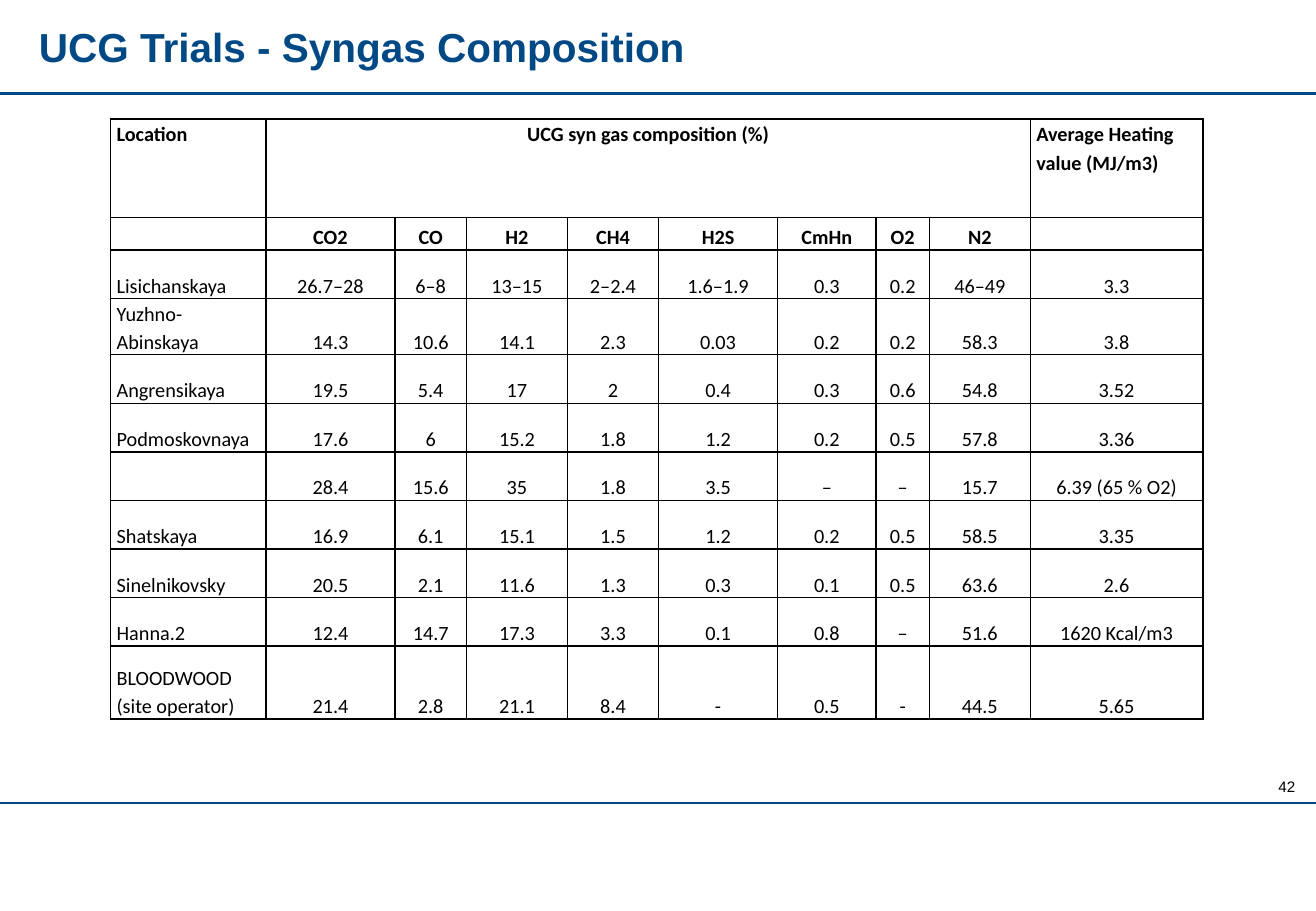
from lxml import etree
from pptx import Presentation, util as u
from pptx.dml.color import RGBColor
from pptx.enum import shapes, text
from pptx.oxml.ns import qn

W, H = 10.83, 7.5
NAVY, BLACK = "014985", "000000"
LEFT, CENTER, RIGHT = text.PP_ALIGN.LEFT, text.PP_ALIGN.CENTER, text.PP_ALIGN.RIGHT
TOP, MIDDLE, BOTTOM = text.MSO_ANCHOR.TOP, text.MSO_ANCHOR.MIDDLE, text.MSO_ANCHOR.BOTTOM


def write(tf, words, size=12, font="Calibri", color=BLACK, bold=False,
          align=CENTER, spacing=1.15):
    p = tf.paragraphs[0]
    p.alignment, p.line_spacing = align, spacing
    if not words:
        p._p.get_or_add_endParaRPr().set("sz", str(size * 100))
        return
    r = p.add_run()
    r.text = words
    r.font.size, r.font.name, r.font.bold = u.Pt(size), font, bold
    r.font.color.rgb = RGBColor.from_string(color)


def add_borders(cell):
    """Draw a thin black line on all four sides of a table cell."""
    tcPr = cell._tc.get_or_add_tcPr()
    for side in ("lnL", "lnR", "lnT", "lnB"):
        ln = etree.SubElement(tcPr, qn("a:" + side), w=str(u.Pt(1)))
        fill = etree.SubElement(ln, qn("a:solidFill"))
        etree.SubElement(fill, qn("a:srgbClr"), val=BLACK)


prs = Presentation()
prs.slide_width, prs.slide_height = u.Inches(W), u.Inches(H)
s = prs.slides.add_slide(prs.slide_layouts[6])

# Rules across the page
for y in (6.61, 0.77):
    rule = s.shapes.add_connector(shapes.MSO_CONNECTOR.STRAIGHT,
                                  0, u.Inches(y), u.Inches(W), u.Inches(y))
    rule.line.color.rgb = RGBColor.from_string(NAVY)
    rule.line.width = u.Pt(1.5)
    etree.SubElement(rule._element.spPr, qn("a:effectLst"))

# Title and page number
for box, wrap, words, look in (
    ((0.21, 0.14, 10.3, 0.51), True, "UCG Trials - Syngas Composition",
     dict(size=24, color=NAVY, bold=True, align=LEFT, spacing=0.98)),
    ((10.41, 6.35, 0.36, 0.25), False, "42", dict(size=9, align=RIGHT, spacing=1.0)),
):
    tf = s.shapes.add_textbox(*map(u.Inches, box)).text_frame
    tf.word_wrap, tf.vertical_anchor = wrap, MIDDLE
    tf.margin_left = tf.margin_right = u.Inches(0.11)
    write(tf, words, font="Arial", **look)

# Gas composition table
rows = [
    ["Location", "UCG syn gas composition (%)"] + [""] * 7 + ["Average Heating value (MJ/m3)"],
    ["", "CO2", "CO", "H2", "CH4", "H2S", "CmHn", "O2", "N2", ""],
    ["Lisichanskaya", "26.7–28", "6–8", "13–15", "2–2.4", "1.6–1.9", "0.3", "0.2", "46–49", "3.3"],
    ["Yuzhno-Abinskaya", "14.3", "10.6", "14.1", "2.3", "0.03", "0.2", "0.2", "58.3", "3.8"],
    ["Angrensikaya", "19.5", "5.4", "17", "2", "0.4", "0.3", "0.6", "54.8", "3.52"],
    ["Podmoskovnaya", "17.6", "6", "15.2", "1.8", "1.2", "0.2", "0.5", "57.8", "3.36"],
    ["", "28.4", "15.6", "35", "1.8", "3.5", "–", "–", "15.7", "6.39 (65 % O2)"],
    ["Shatskaya", "16.9", "6.1", "15.1", "1.5", "1.2", "0.2", "0.5", "58.5", "3.35"],
    ["Sinelnikovsky", "20.5", "2.1", "11.6", "1.3", "0.3", "0.1", "0.5", "63.6", "2.6"],
    ["Hanna.2", "12.4", "14.7", "17.3", "3.3", "0.1", "0.8", "–", "51.6", "1620 Kcal/m3"],
    ["BLOODWOOD (site operator)", "21.4", "2.8", "21.1", "8.4", "-", "0.5", "-", "44.5", "5.65"],
]
widths = [1.28, 1.06, 0.59, 0.83, 0.75, 0.98, 0.81, 0.44, 0.83, 1.42]
heights = [0.81, 0.27] + [0.4] * 8 + [0.6]

table = s.shapes.add_table(len(rows), len(widths), u.Inches(0.91), u.Inches(0.98),
                           u.Inches(sum(widths)), u.Inches(sum(heights))).table
table.first_row = table.horz_banding = False
for column, width in zip(table.columns, widths):
    column.width = u.Inches(width)
for row, height in zip(table.rows, heights):
    row.height = u.Inches(height)
table.cell(0, 1).merge(table.cell(0, 8))

for i, row in enumerate(rows):
    for j, words in enumerate(row):
        cell = table.cell(i, j)
        add_borders(cell)
        cell.fill.background()
        cell.margin_left = cell.margin_right = u.Inches(0.05)
        cell.margin_top = cell.margin_bottom = 0
        cell.vertical_anchor = BOTTOM if i else TOP
        at_left = j == 0 or (i == 0 and j == 9)
        write(cell.text_frame, words, bold=i < 2, align=LEFT if at_left else CENTER)

prs.save("out.pptx")
